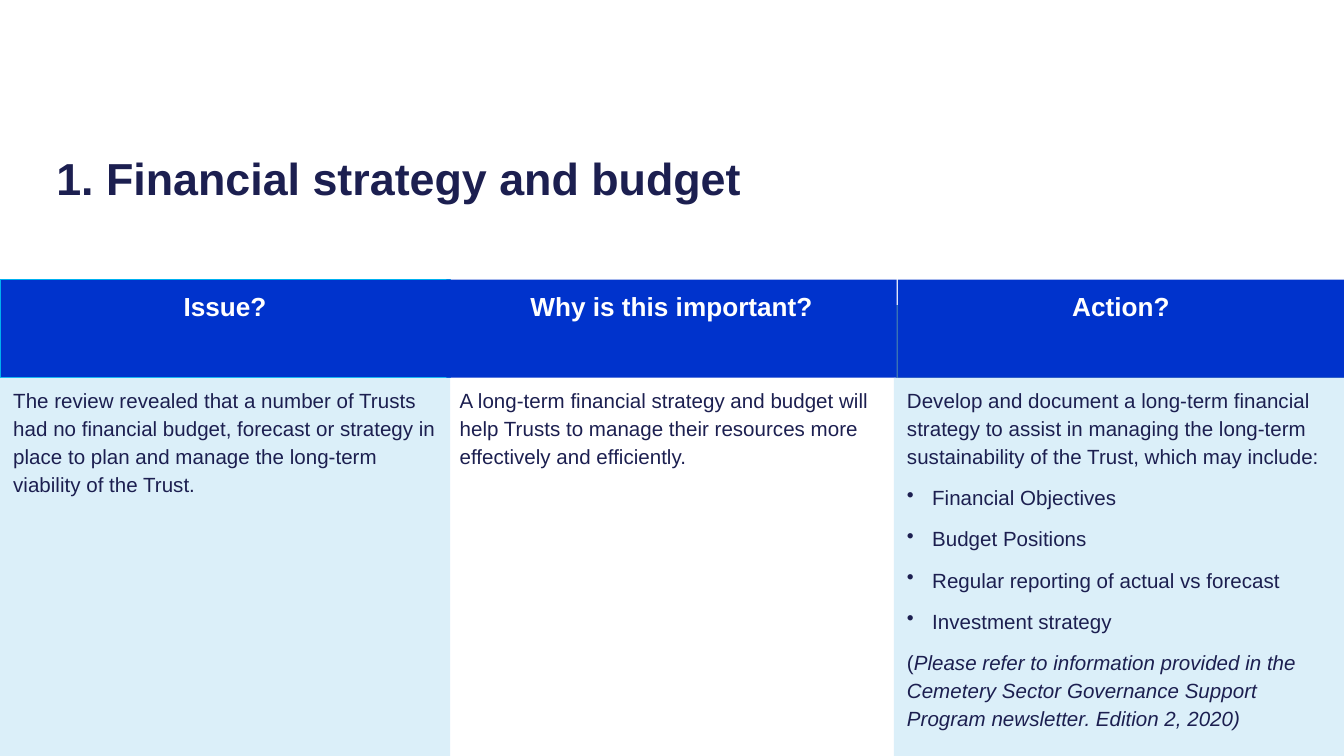
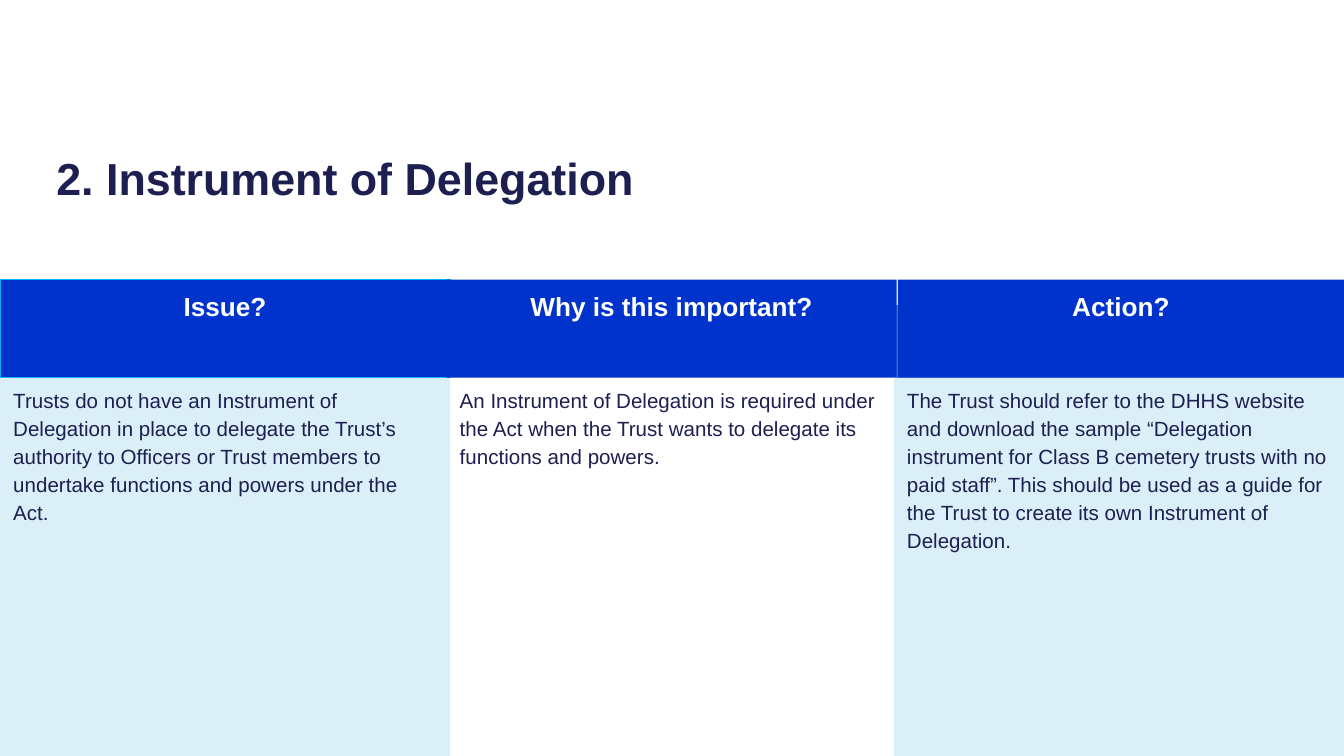
from dataclasses import dataclass
from typing import Optional

import pptx
import pptx.dml.color
import pptx.enum.shapes
import pptx.enum.text
import pptx.oxml.ns
import pptx.presentation
import pptx.shapes.autoshape
import pptx.slide
import pptx.text.text
import pptx.util
from lxml import etree

Align = pptx.enum.text.PP_ALIGN
Anchor = pptx.enum.text.MSO_ANCHOR
Pt = pptx.util.Pt


@dataclass(frozen=True)
class Theme:
    font: str = "Arial"
    ink: str = "1C1F50"
    white: str = "FFFFFF"
    band: str = "0033CC"
    band_edge: str = "00B0F0"
    side_panel: str = "427CB2"
    tint: str = "DBEFF9"
    title_size: float = 24
    heading_size: float = 14
    body_size: float = 11


@dataclass(frozen=True)
class Frame:
    left: float
    top: float
    width: float
    height: float


@dataclass(frozen=True)
class Span:
    text: str
    italic: bool = False


@dataclass(frozen=True)
class Para:
    spans: tuple[Span, ...]
    bullet: bool = False


@dataclass(frozen=True)
class TextStyle:
    size: float
    color: str
    bold: bool = False
    align: Align = Align.LEFT
    line_spacing: float = 1.14
    before: float = 6
    after: float = 1


@dataclass(frozen=True)
class Column:
    heading: str
    heading_left: float
    heading_width: float
    body_left: float
    fill: Optional[str]
    edge: Optional[str] = None


@dataclass(frozen=True)
class Topic:
    title: str
    bodies: tuple[tuple[Para, ...], ...]


THEME = Theme()
WIDTH, HEIGHT = 720, 405
HEADING_TOP, BODY_TOP, PANEL_TOP = 149.8, 202.4, 163.5
BODY_WIDTH = 241.2
PANEL_WIDTH = WIDTH / 3
BULLET_INDENT = 13.5
TITLE_FRAME = Frame(23, 73.4, 674, 37.4)

TITLE_STYLE = TextStyle(THEME.title_size, THEME.ink, True,
                        line_spacing=1.2, before=2, after=2)
HEADING_STYLE = TextStyle(THEME.heading_size, THEME.white, True, Align.CENTER)
BODY_STYLE = TextStyle(THEME.body_size, THEME.ink)

COLUMNS = (
    Column("Issue?", 0, BODY_WIDTH, 0, THEME.tint, THEME.band_edge),
    Column("Why is this important?", 239.2, BODY_WIDTH, 239.2, None),
    Column("Action?", 481, WIDTH - 481, WIDTH - BODY_WIDTH, THEME.tint),
)


def plain(text: str, bullet: bool = False) -> Para:
    return Para((Span(text),), bullet)


TOPICS = (
    Topic("1. Financial strategy and budget", (
        (plain("The review revealed that a number of Trusts had no financial "
               "budget, forecast or strategy in place to plan and manage the "
               "long-term viability of the Trust."),),
        (plain("A long-term financial strategy and budget will help Trusts to "
               "manage their resources more effectively and efficiently."),),
        (
            plain("Develop and document a long-term financial strategy to "
                  "assist in managing the long-term sustainability of the "
                  "Trust, which may include:"),
            plain("Financial Objectives", True),
            plain("Budget Positions", True),
            plain("Regular reporting of actual vs forecast", True),
            plain("Investment strategy", True),
            Para((Span("("),
                  Span("Please refer to information provided in the Cemetery "
                       "Sector Governance Support Program newsletter. "
                       "Edition 2, 2020)", True))),
        ),
    )),
    Topic("2. Instrument of Delegation", (
        (plain("Trusts do not have an Instrument of Delegation in place to "
               "delegate the Trust’s authority to Officers or Trust members "
               "to undertake functions and powers under the Act."),),
        (plain("An Instrument of Delegation is required under the Act when "
               "the Trust wants to delegate its functions and powers."),),
        (plain("The Trust should refer to the DHHS website and download the "
               "sample “Delegation instrument for Class B cemetery trusts "
               "with no paid staff”. This should be used as a guide for the "
               "Trust to create its own Instrument of Delegation."),),
    )),
)


def rgb(color: str) -> pptx.dml.color.RGBColor:
    return pptx.dml.color.RGBColor.from_string(color)


def add_bullet(paragraph: pptx.text.text._Paragraph) -> None:
    properties = paragraph._p.get_or_add_pPr()
    properties.set("marL", str(Pt(BULLET_INDENT)))
    properties.set("indent", str(-Pt(BULLET_INDENT)))
    mark = etree.SubElement(properties, pptx.oxml.ns.qn("a:buChar"))
    mark.set("char", "•")


def write(frame: pptx.text.text.TextFrame, paras: tuple[Para, ...],
          style: TextStyle, anchor: Anchor) -> None:
    frame.word_wrap = True
    frame.auto_size = pptx.enum.text.MSO_AUTO_SIZE.NONE
    frame.vertical_anchor = anchor
    for index, para in enumerate(paras):
        paragraph = frame.add_paragraph() if index else frame.paragraphs[0]
        paragraph.alignment = style.align
        paragraph.line_spacing = style.line_spacing
        paragraph.space_before = Pt(style.before if index else 0)
        paragraph.space_after = Pt(style.after)
        if para.bullet:
            add_bullet(paragraph)
        for span in para.spans:
            run = paragraph.add_run()
            run.text = span.text
            run.font.name = THEME.font
            run.font.size = Pt(style.size)
            run.font.bold = style.bold
            run.font.italic = span.italic
            run.font.color.rgb = rgb(style.color)


def add_box(page: pptx.slide.Slide, frame: Frame, fill: Optional[str],
            edge: Optional[str] = None) -> pptx.shapes.autoshape.Shape:
    box = page.shapes.add_shape(
        pptx.enum.shapes.MSO_SHAPE.RECTANGLE, Pt(frame.left), Pt(frame.top),
        Pt(frame.width), Pt(frame.height))
    box.shadow.inherit = False
    if fill:
        box.fill.solid()
        box.fill.fore_color.rgb = rgb(fill)
    else:
        box.fill.background()
    if edge:
        box.line.color.rgb = rgb(edge)
        box.line.width = Pt(0.75)
    else:
        box.line.fill.background()
    return box


def add_title(page: pptx.slide.Slide, text: str) -> None:
    title = page.shapes.title
    title.left, title.top = Pt(TITLE_FRAME.left), Pt(TITLE_FRAME.top)
    title.width, title.height = Pt(TITLE_FRAME.width), Pt(TITLE_FRAME.height)
    write(title.text_frame, (plain(text),), TITLE_STYLE, Anchor.MIDDLE)


def add_column(page: pptx.slide.Slide, column: Column,
               body: tuple[Para, ...]) -> None:
    heading = add_box(page, Frame(column.heading_left, HEADING_TOP,
                                  column.heading_width, BODY_TOP - HEADING_TOP),
                      THEME.band, column.edge)
    write(heading.text_frame, (plain(column.heading),), HEADING_STYLE, Anchor.TOP)
    box = add_box(page, Frame(column.body_left, BODY_TOP, BODY_WIDTH,
                              HEIGHT - BODY_TOP), column.fill)
    write(box.text_frame, body, BODY_STYLE, Anchor.TOP)


def add_topic(deck: pptx.presentation.Presentation, topic: Topic) -> None:
    page = deck.slides.add_slide(deck.slide_layouts.get_by_name("Title Only"))
    page.background.fill.solid()
    page.background.fill.fore_color.rgb = rgb(THEME.white)
    add_title(page, topic.title)
    for left, color in ((0, THEME.band), (WIDTH - PANEL_WIDTH, THEME.side_panel)):
        add_box(page, Frame(left, PANEL_TOP, PANEL_WIDTH, HEIGHT - PANEL_TOP), color)
    for column, body in zip(COLUMNS, topic.bodies):
        add_column(page, column, body)


def main() -> None:
    deck = pptx.Presentation()
    deck.slide_width, deck.slide_height = Pt(WIDTH), Pt(HEIGHT)
    for topic in TOPICS:
        add_topic(deck, topic)
    deck.save("out.pptx")


if __name__ == "__main__":
    main()
